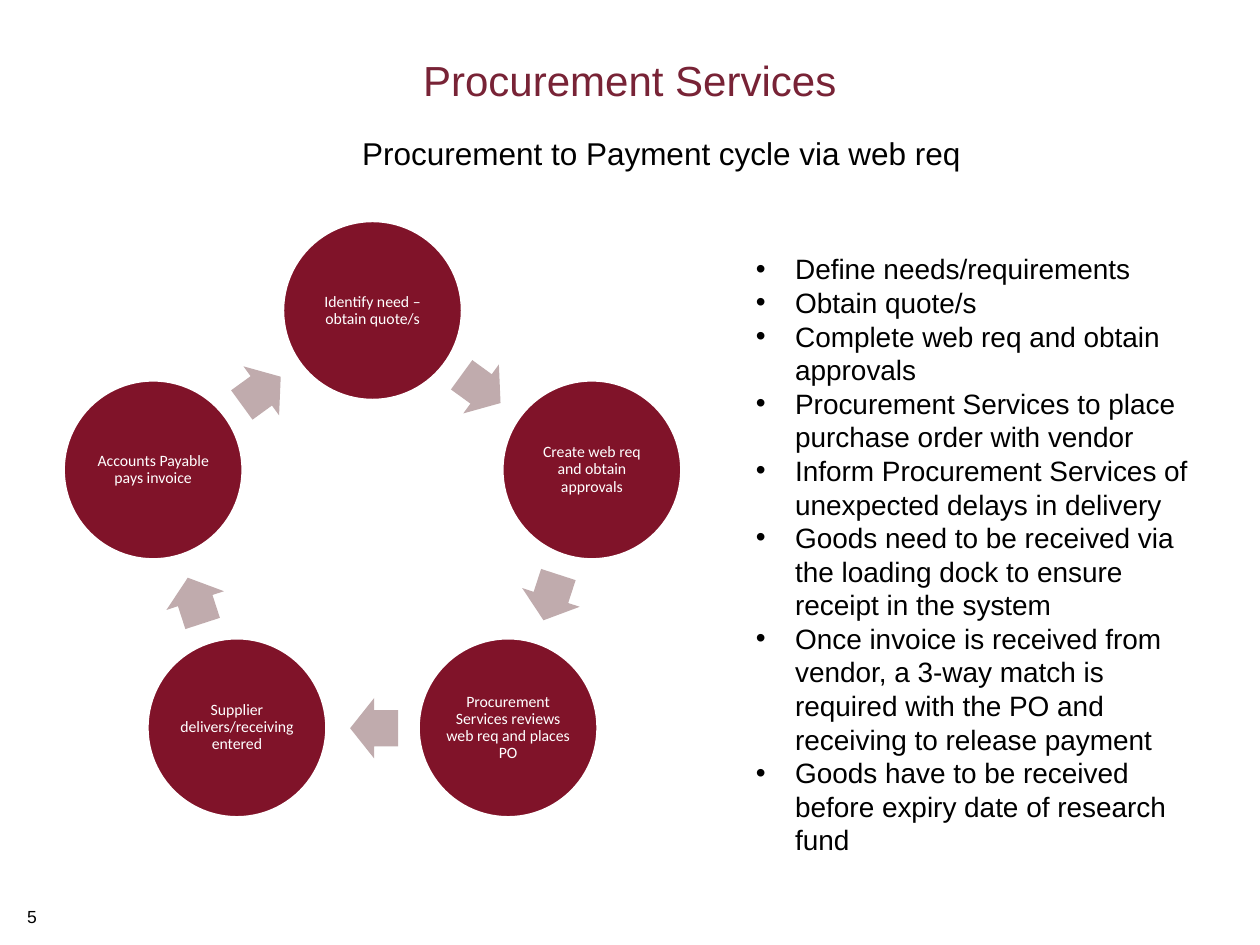
from math import cos, radians, sin

from lxml.etree import SubElement
from pptx import Presentation
from pptx.dml.color import RGBColor
from pptx.enum.shapes import MSO_SHAPE as Shape
from pptx.enum.text import MSO_ANCHOR as Anchor, PP_ALIGN as Align
from pptx.oxml.ns import qn
from pptx.util import Cm, Pt

BLACK = RGBColor(0x00, 0x00, 0x00)
WHITE = RGBColor(0xFF, 0xFF, 0xFF)
TITLE_RED = RGBColor(0x78, 0x23, 0x36)
STEP_RED = RGBColor(0x80, 0x13, 0x29)
ARROW_PINK = RGBColor(0xC0, 0xAB, 0xAD)

# Cycle geometry in centimetres
CENTER_X, CENTER_Y = 7.51, 10.91
STEP_RADIUS, STEP_SIZE = 4.65, 3.63
ARROW_RADIUS, ARROW_LENGTH, ARROW_WIDTH = 3.77, 0.97, 1.22
ARROW_LAG = 0.5  # degrees the arrows sit behind the midpoint of two steps

STEPS = [
    "Identify need – obtain quote/s",
    "Create web req and obtain approvals",
    "Procurement Services reviews web req and places PO",
    "Supplier delivers/receiving entered",
    "Accounts Payable pays invoice",
]

GUIDELINES = [
    "Define needs/requirements",
    "Obtain quote/s",
    "Complete web req and obtain approvals",
    "Procurement Services to place purchase order with vendor",
    "Inform Procurement Services of unexpected delays in delivery",
    "Goods need to be received via the loading dock to ensure receipt in the system",
    "Once invoice is received from vendor, a 3-way match is required with the PO "
    "and receiving to release payment",
    "Goods have to be received before expiry date of research fund",
]


def set_font(paragraph, size, color, name="Arial"):
    font = paragraph.font
    font.name, font.size = name, Pt(size)
    font.color.rgb = color


def set_insets(frame, inset):
    frame.margin_left = frame.margin_right = inset
    frame.margin_top = frame.margin_bottom = inset


def add_label(slide, text, left, top, width, height, size,
              color=BLACK, align=Align.CENTER, anchor=Anchor.MIDDLE):
    box = slide.shapes.add_textbox(Cm(left), Cm(top), Cm(width), Cm(height))
    frame = box.text_frame
    frame.word_wrap = True
    frame.vertical_anchor = anchor
    frame.text = text
    paragraph = frame.paragraphs[0]
    paragraph.alignment = align
    set_font(paragraph, size, color)


def add_on_circle(slide, kind, angle, radius, width, height, color):
    """Place a shape around the cycle centre, angle clockwise from the top."""
    x = CENTER_X + radius * sin(radians(angle))
    y = CENTER_Y - radius * cos(radians(angle))
    shape = slide.shapes.add_shape(
        kind, Cm(x - width / 2), Cm(y - height / 2), Cm(width), Cm(height))
    shape.shadow.inherit = False
    shape.fill.solid()
    shape.fill.fore_color.rgb = color
    return shape


def add_step(slide, text, angle):
    step = add_on_circle(slide, Shape.OVAL, angle, STEP_RADIUS,
                         STEP_SIZE, STEP_SIZE, STEP_RED)
    step.line.color.rgb = WHITE
    step.line.width = Pt(2)
    frame = step.text_frame
    frame.word_wrap = True
    frame.vertical_anchor = Anchor.MIDDLE
    set_insets(frame, Cm(0.03))
    frame.text = text
    paragraph = frame.paragraphs[0]
    paragraph.alignment = Align.CENTER
    paragraph.line_spacing = 0.9
    set_font(paragraph, 9, WHITE, "Calibri")


def add_arrow(slide, angle):
    arrow = add_on_circle(slide, Shape.RIGHT_ARROW, angle - ARROW_LAG, ARROW_RADIUS,
                          ARROW_LENGTH, ARROW_WIDTH, ARROW_PINK)
    arrow.line.fill.background()
    arrow.adjustments[0] = 0.6
    arrow.adjustments[1] = 0.5
    arrow.rotation = angle


def add_cycle(slide, steps):
    turn = 360 / len(steps)
    for i, text in enumerate(steps):
        add_step(slide, text, i * turn)
        add_arrow(slide, (i + 0.5) * turn)


def add_bullets(slide, items, left, top, width, height):
    box = slide.shapes.add_textbox(Cm(left), Cm(top), Cm(width), Cm(height))
    frame = box.text_frame
    frame.word_wrap = True
    set_insets(frame, 0)
    frame.text = "\n".join(items)
    indent = Cm(0.79)
    for paragraph in frame.paragraphs:
        properties = paragraph._p.get_or_add_pPr()
        properties.set("marL", str(indent))
        properties.set("indent", str(-indent))
        SubElement(properties, qn("a:buFont")).set("typeface", "Arial")
        SubElement(properties, qn("a:buChar")).set("char", "•")
        set_font(paragraph, 16, BLACK)


def main():
    presentation = Presentation()
    presentation.slide_width, presentation.slide_height = Cm(25.4), Cm(19.05)
    slide = presentation.slides.add_slide(presentation.slide_layouts[6])

    # Page number and headings
    add_label(slide, "5", 0.3, 18.14, 2.21, 0.69, 10,
              align=Align.LEFT, anchor=Anchor.TOP)
    add_label(slide, "Procurement to Payment cycle via web req",
              2.54, 2.57, 21.59, 1.02, 18)
    add_label(slide, "Procurement Services", 1.9, 1.07, 21.59, 1.07, 24, TITLE_RED)

    # Payment cycle and its guidelines
    add_cycle(slide, STEPS)
    add_bullets(slide, GUIDELINES, 15.24, 5.08, 8.89, 11.86)

    presentation.save("out.pptx")


if __name__ == "__main__":
    main()
